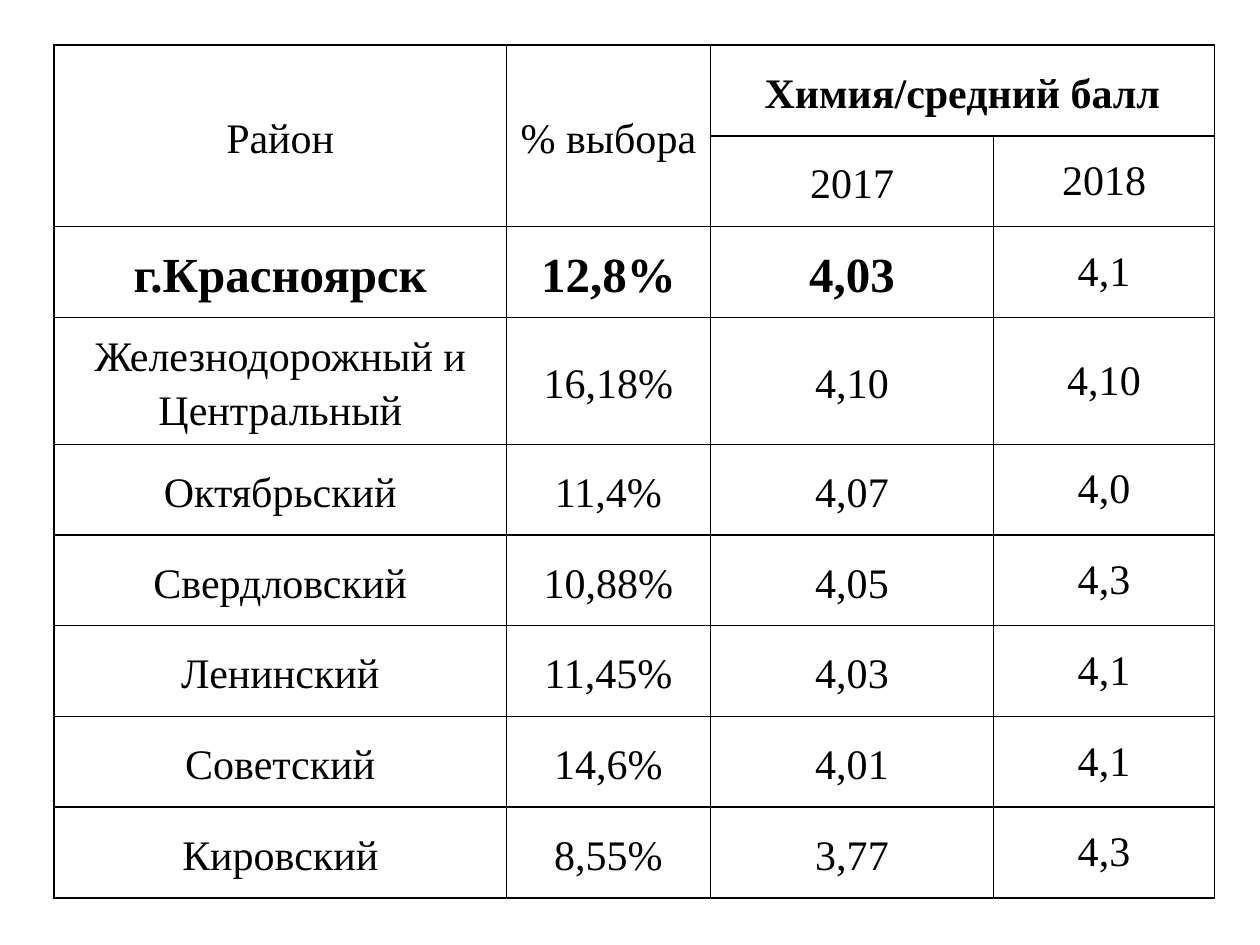
from dataclasses import dataclass

from lxml import etree
from pptx import Presentation
from pptx.dml.color import RGBColor
from pptx.enum.text import MSO_ANCHOR, PP_ALIGN
from pptx.oxml.ns import qn
from pptx.util import Cm, Pt

CENTER = PP_ALIGN.CENTER
MIDDLE = MSO_ANCHOR.MIDDLE
BLANK_LAYOUT = 6


@dataclass(frozen=True)
class Theme:
    """Colours, font and type sizes of the slide."""
    ink: str = "000000"
    font: str = "Times New Roman"
    body_size: int = 24
    city_size: int = 28
    border_width: int = 1
    line_spacing: float = 1.15


THEME = Theme()

COLUMN_SHARES = (9.12, 4.11, 5.71, 4.45)
ROW_SHARES = (1.83, 1.83, 1.83, 2.56, 1.83, 1.83, 1.83, 1.83, 1.83)
SCORES = (
    ("Район", "% выбора", "Химия/средний балл", ""),
    ("", "", "2017", "2018"),
    ("г.Красноярск", "12,8%", "4,03", "4,1"),
    ("Железнодорожный и Центральный", "16,18%", "4,10", "4,10"),
    ("Октябрьский", "11,4%", "4,07", "4,0"),
    ("Свердловский", "10,88%", "4,05", "4,3"),
    ("Ленинский", "11,45%", "4,03", "4,1"),
    ("Советский", "14,6%", "4,01", "4,1"),
    ("Кировский", "8,55%", "3,77", "4,3"),
)
CITY_ROW = 2
LAST_COLUMN = len(COLUMN_SHARES) - 1
MERGES = (((0, 0), (1, 0)), ((0, 1), (1, 1)), ((0, 2), (0, 3)))


def add_borders(cell):
    """Draw a thin solid line on all four sides of a cell."""
    properties = cell._tc.get_or_add_tcPr()
    for side in ("a:lnL", "a:lnR", "a:lnT", "a:lnB"):
        line = etree.SubElement(properties, qn(side), w=str(Pt(THEME.border_width)))
        fill = etree.SubElement(line, qn("a:solidFill"))
        etree.SubElement(fill, qn("a:srgbClr"), val=THEME.ink)


def fill_cell(cell, text, size, bold, spacing):
    """Write one centred cell with its borders and type."""
    add_borders(cell)
    cell.fill.background()
    cell.vertical_anchor = MIDDLE
    cell.margin_left = cell.margin_right = Cm(0.18)
    cell.margin_top = cell.margin_bottom = 0
    if not text:
        return
    cell.text_frame.text = text
    paragraph = cell.text_frame.paragraphs[0]
    paragraph.alignment = CENTER
    paragraph.line_spacing = spacing
    font = paragraph.runs[0].font
    font.name = THEME.font
    font.size = Pt(size)
    font.bold = bold
    font.color.rgb = RGBColor.from_string(THEME.ink)


def add_score_table(slide, left, top, width, height):
    """Place the district score table in the given box."""
    frame = slide.shapes.add_table(
        len(ROW_SHARES), len(COLUMN_SHARES), left, top, width, height)
    table = frame.table
    table.first_row = table.horz_banding = False
    for column, share in zip(table.columns, COLUMN_SHARES):
        column.width = int(width * share / sum(COLUMN_SHARES))
    for row, share in zip(table.rows, ROW_SHARES):
        row.height = int(height * share / sum(ROW_SHARES))
    for start, end in MERGES:
        table.cell(*start).merge(table.cell(*end))
    for row_index, row in enumerate(SCORES):
        for column_index, text in enumerate(row):
            is_city = row_index == CITY_ROW and column_index < LAST_COLUMN
            is_subject = (row_index, column_index) == (0, 2)
            fill_cell(
                table.cell(row_index, column_index),
                text,
                THEME.city_size if is_city else THEME.body_size,
                is_city or is_subject,
                None if column_index == LAST_COLUMN else THEME.line_spacing,
            )


def main():
    """Build and save the presentation."""
    presentation = Presentation()
    presentation.slide_width = Cm(25.4)
    presentation.slide_height = Cm(19.05)
    slide = presentation.slides.add_slide(presentation.slide_layouts[BLANK_LAYOUT])
    add_score_table(slide, Cm(1.09), Cm(0.91), Cm(23.39), Cm(17.2))
    presentation.save("out.pptx")


if __name__ == "__main__":
    main()
